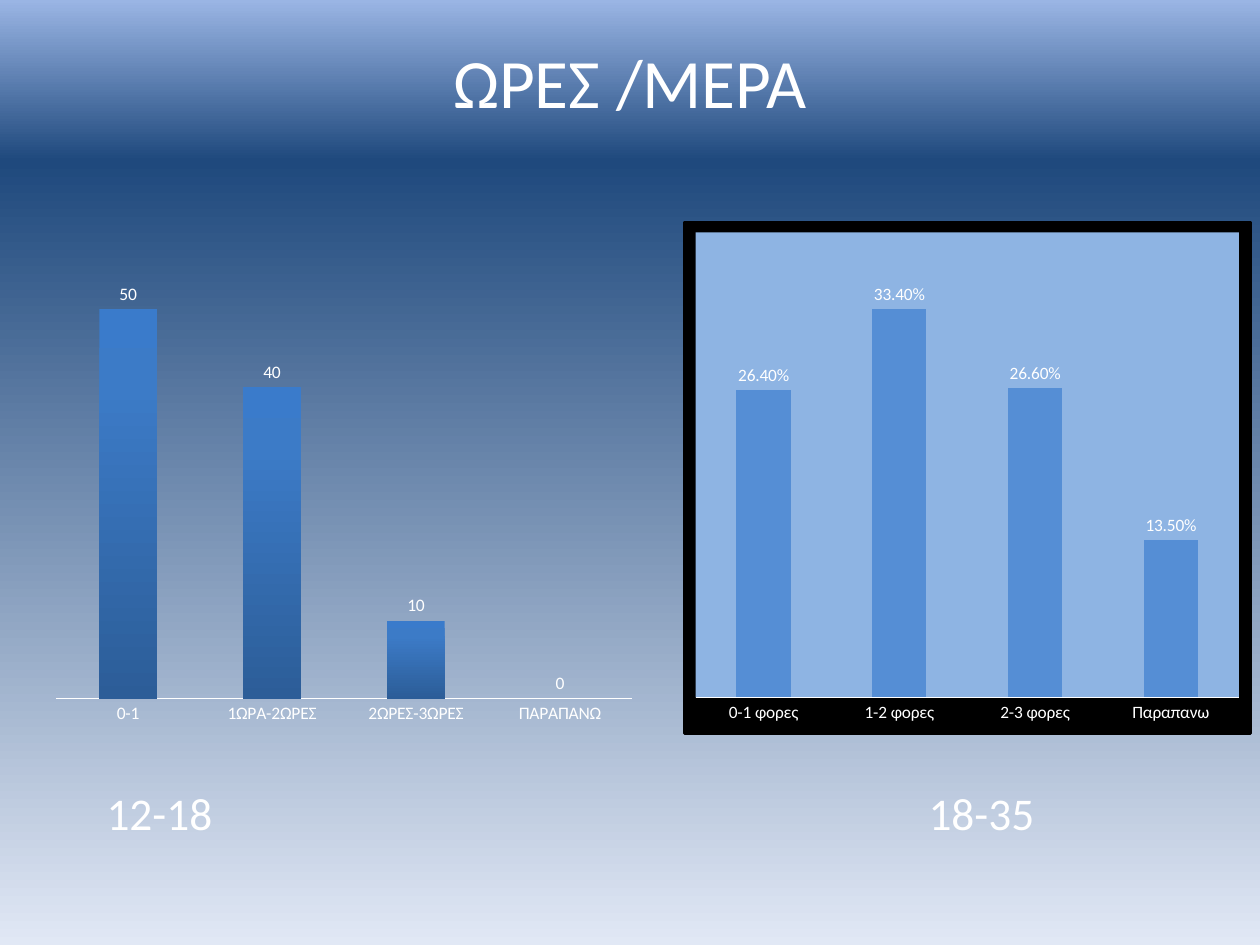
from copy import deepcopy

from lxml.etree import SubElement, fromstring
from pptx import Presentation
from pptx.chart.data import CategoryChartData
from pptx.dml.color import RGBColor
from pptx.enum.chart import XL_CHART_TYPE as ChartType
from pptx.enum.chart import XL_LABEL_POSITION as LabelPosition
from pptx.enum.chart import XL_TICK_MARK as TickMark
from pptx.enum.text import MSO_ANCHOR as Anchor
from pptx.enum.text import PP_ALIGN as Align
from pptx.oxml.ns import nsdecls, qn
from pptx.util import Cm, Pt

WHITE = RGBColor(0xFF, 0xFF, 0xFF)
BLACK = RGBColor(0x00, 0x00, 0x00)
SKY = RGBColor(0x9A, 0xB5, 0xE4)
NAVY = RGBColor(0x1F, 0x49, 0x7D)
MIST = RGBColor(0xE1, 0xE8, 0xF5)
BAR_TOP = RGBColor(0x3A, 0x7B, 0xCB)
BAR_MIDDLE = RGBColor(0x3C, 0x7B, 0xC7)
BAR_FOOT = RGBColor(0x2C, 0x5D, 0x98)
BAR_FLAT = RGBColor(0x55, 0x8E, 0xD5)
PLOT_BLUE = RGBColor(0x8E, 0xB4, 0xE3)

FONT = "Calibri"
COMPARISON_LAYOUT = 4
PLOT_BOX = {"x": 0.02, "y": 0.02, "w": 0.96, "h": 0.91}


def paint_downward(fill, owner, stops):
    """Fill from top to bottom with three (percent, colour) stops."""
    fill.gradient()
    fill.gradient_angle = 270
    stop_list = next(owner.iter(qn("a:gsLst")))
    stop_list.append(deepcopy(stop_list[-1]))
    for stop, (percent, colour) in zip(fill.gradient_stops, stops):
        stop.position = percent / 100
        stop.color.rgb = colour


def solid_properties(fill, border=""):
    return fromstring(
        f'<c:spPr {nsdecls("c", "a")}><a:solidFill><a:srgbClr val="{fill}"/>'
        f"</a:solidFill>{border}</c:spPr>")


class ComparisonSlide:
    def __init__(self, presentation):
        layout = presentation.slide_layouts[COMPARISON_LAYOUT]
        self.slide = presentation.slides.add_slide(layout)
        paint_downward(self.slide.background.fill, self.slide.element,
                       [(0, SKY), (17, NAVY), (100, MIST)])

    def fill_placeholder(self, index, text, box, size):
        holder = next(holder for holder in self.slide.placeholders
                      if holder.placeholder_format.idx == index)
        holder.left, holder.top, holder.width, holder.height = map(Cm, box)
        frame = holder.text_frame
        frame.text = text
        frame.vertical_anchor = Anchor.TOP
        paragraph = frame.paragraphs[0]
        paragraph.alignment = Align.CENTER
        font = paragraph.runs[0].font
        font.name, font.size, font.bold = FONT, Pt(size), False
        font.color.rgb = WHITE
        return frame

    def columns(self, box, values, top, number_format="General"):
        data = CategoryChartData(number_format=number_format)
        data.categories = list(values)
        data.add_series("Series 1", list(values.values()))
        chart = self.slide.shapes.add_chart(
            ChartType.COLUMN_CLUSTERED, *map(Cm, box), data).chart
        chart.has_legend = chart.has_title = False
        chart.font.name, chart.font.size = FONT, Pt(10)
        chart.font.color.rgb = WHITE

        scale = chart.value_axis
        scale.minimum_scale, scale.maximum_scale = 0, top
        scale.has_major_gridlines = scale.visible = False
        scale.tick_labels.number_format = number_format
        scale.tick_labels.number_format_is_linked = False
        chart.category_axis.major_tick_mark = TickMark.NONE
        chart.category_axis.format.line.color.rgb = WHITE

        plot = chart.plots[0]
        plot.gap_width, plot.overlap = 150, -25
        plot.vary_by_categories = False
        plot.has_data_labels = True
        labels = plot.data_labels
        labels.show_value = True
        labels.position = LabelPosition.OUTSIDE_END
        labels.number_format = number_format
        labels.number_format_is_linked = False
        self.fix_plot_box(chart)
        return chart

    def fix_plot_box(self, chart):
        area = next(chart.element.iter(qn("c:plotArea")))
        for layout in area.findall(qn("c:layout")):
            area.remove(layout)
        layout = SubElement(area, qn("c:layout"))
        area.insert(0, layout)
        manual = SubElement(layout, qn("c:manualLayout"))
        settings = {"layoutTarget": "inner", "xMode": "edge", "yMode": "edge",
                    **PLOT_BOX}
        for name, value in settings.items():
            SubElement(manual, qn(f"c:{name}")).set("val", str(value))

    def frame_chart(self, chart, frame_colour, plot_colour):
        border = (f'<a:ln w="{Pt(1.5)}"><a:solidFill><a:srgbClr '
                  f'val="{frame_colour}"/></a:solidFill></a:ln>')
        chart.element.find(qn("c:chart")).addnext(
            solid_properties(frame_colour, border))
        next(chart.element.iter(qn("c:plotArea"))).append(
            solid_properties(plot_colour))

    def remove_empty_placeholders(self):
        for holder in list(self.slide.placeholders):
            if not holder.text_frame.text:
                holder.element.getparent().remove(holder.element)


def main():
    presentation = Presentation()
    presentation.slide_width, presentation.slide_height = Cm(25.4), Cm(19.05)
    hours = ComparisonSlide(presentation)

    title = hours.fill_placeholder(
        0, "ΩΡΕΣ /ΜΕΡΑ", (1.27, 0.79, 22.86, 3.18), 39.6)
    title.margin_top = 0
    hours.fill_placeholder(1, "12-18", (1.27, 15.7, 3.89, 1.32), 25.9)
    hours.fill_placeholder(3, "18-35", (14.17, 15.7, 11.23, 1.85), 25.9)
    hours.remove_empty_placeholders()

    teens = hours.columns(
        (0.89, 4.45, 12.09, 10.36),
        {"0-1": 50, "1ΩΡΑ-2ΩΡΕΣ": 40, "2ΩΡΕΣ-3ΩΡΕΣ": 10, "ΠΑΡΑΠΑΝΩ": 0},
        top=60)
    teen_bars = teens.plots[0].series[0]
    paint_downward(teen_bars.format.fill, teens.element,
                   [(0, BAR_TOP), (20, BAR_MIDDLE), (100, BAR_FOOT)])

    adults = hours.columns(
        (13.77, 4.45, 11.46, 10.36),
        {"0-1 φορες": 0.264, "1-2 φορες": 0.334, "2-3 φορες": 0.266,
         "Παραπανω": 0.135},
        top=0.4, number_format="0.00%")
    adult_fill = adults.plots[0].series[0].format.fill
    adult_fill.solid()
    adult_fill.fore_color.rgb = BAR_FLAT
    hours.frame_chart(adults, BLACK, PLOT_BLUE)

    presentation.save("out.pptx")


if __name__ == "__main__":
    main()
